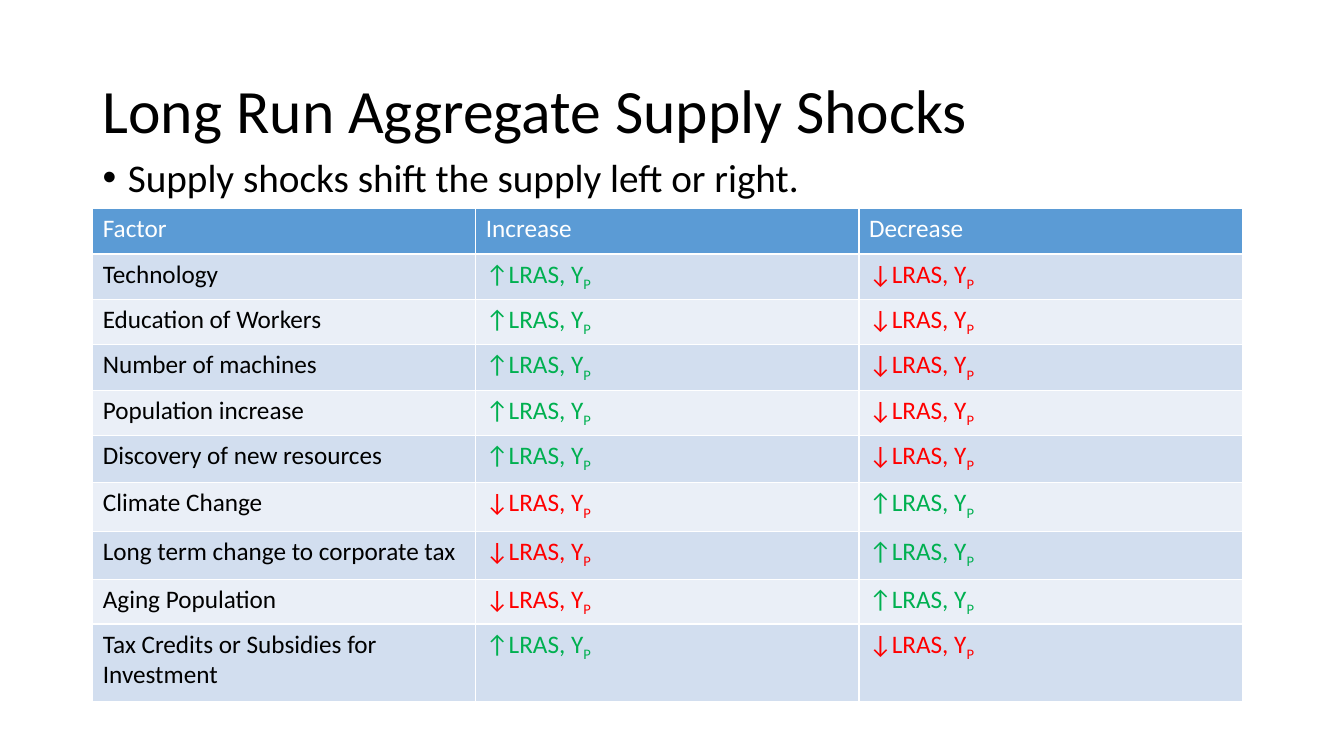
import pptx
import pptx.util
import pptx.dml.color
import pptx.enum.text
from lxml import etree

Inches = pptx.util.Inches

TITLE = "Long Run Aggregate Supply Shocks"
BULLET = "Supply shocks shift the supply left or right."
HEADERS = ("Factor", "Increase", "Decrease")
# Factor, arrow when it increases, row height
FACTORS = [
    ("Technology", "↑", 0.45),
    ("Education of Workers", "↑", 0.45),
    ("Number of machines", "↑", 0.45),
    ("Population increase", "↑", 0.45),
    ("Discovery of new resources", "↑", 0.47),
    ("Climate Change", "↓", 0.48),
    ("Long term change to corporate tax", "↓", 0.48),
    ("Aging Population", "↓", 0.44),
    ("Tax Credits or Subsidies for Investment", "↑", 0.77),
]
OPPOSITE = {"↑": "↓", "↓": "↑"}
EFFECT, SUBSCRIPT = "LRAS, Y", "P"

THEME = {
    "font": "Calibri", "title": 44, "body": 28, "cell": 18,
    "text": "000000", "header_text": "FFFFFF", "header": "5B9BD5",
    "bands": ("D2DEEF", "EAEFF7"),
    "↑": "00B050", "↓": "FF0000",
}
LEFT, TABLE_TOP, HEADER_HEIGHT, COL_WIDTH = 0.92, 2.07, 0.45, 3.8


def rgb(name):
    return pptx.dml.color.RGBColor.from_string(name)


def add_run(p, text, size=THEME["cell"], color=THEME["text"], baseline=None):
    r = p.add_run()
    r.text = text
    r.font.name = THEME["font"]
    r.font.size = pptx.util.Pt(size)
    r.font.bold = False
    r.font.color.rgb = rgb(color)
    if baseline is not None:
        r.font._element.set("baseline", str(baseline * 1000))


def add_text_box(s, top, height, anchor):
    """Return the first paragraph of a new wrapped text box."""
    tf = s.shapes.add_textbox(Inches(LEFT), Inches(top), Inches(11.5), Inches(height)).text_frame
    tf.word_wrap = True
    tf.vertical_anchor = anchor
    p = tf.paragraphs[0]
    p.line_spacing = 0.9
    return p


def add_bullet(p):
    pPr = p._p.get_or_add_pPr()
    pPr.set("marL", str(Inches(0.25)))
    pPr.set("indent", str(-Inches(0.25)))
    ns = pptx.oxml.ns.qn
    etree.SubElement(pPr, ns("a:buFont")).set("typeface", "Arial")
    etree.SubElement(pPr, ns("a:buChar")).set("char", "•")


def fill_cell(cell, color):
    cell.fill.solid()
    cell.fill.fore_color.rgb = rgb(color)
    return cell.text_frame.paragraphs[0]


def add_effect(p, arrow):
    add_run(p, arrow + EFFECT, color=THEME[arrow])
    add_run(p, SUBSCRIPT, color=THEME[arrow], baseline=-25)


def add_factor_table(s):
    heights = [HEADER_HEIGHT] + [height for _, _, height in FACTORS]
    table = s.shapes.add_table(
        len(heights), len(HEADERS), Inches(LEFT), Inches(TABLE_TOP),
        Inches(COL_WIDTH * len(HEADERS)), Inches(sum(heights))).table
    for row, height in zip(table.rows, heights):
        row.height = Inches(height)
    for col, header in enumerate(HEADERS):
        add_run(fill_cell(table.cell(0, col), THEME["header"]), header, color=THEME["header_text"])
    for row, (factor, arrow, _) in enumerate(FACTORS, 1):
        band = THEME["bands"][(row - 1) % 2]
        name, increase, decrease = [fill_cell(c, band) for c in table.rows[row].cells]
        add_run(name, factor)
        add_effect(increase, arrow)
        add_effect(decrease, OPPOSITE[arrow])


def main():
    prs = pptx.Presentation()
    prs.slide_width, prs.slide_height = Inches(13.33), Inches(7.5)
    s = prs.slides.add_slide(prs.slide_layouts[6])
    anchors = pptx.enum.text.MSO_ANCHOR
    add_run(add_text_box(s, 0.4, 1.45, anchors.MIDDLE), TITLE, size=THEME["title"])
    p = add_text_box(s, 1.52, 4.76, anchors.TOP)
    add_bullet(p)
    add_run(p, BULLET, size=THEME["body"])
    add_factor_table(s)
    prs.save("out.pptx")


if __name__ == "__main__":
    main()
